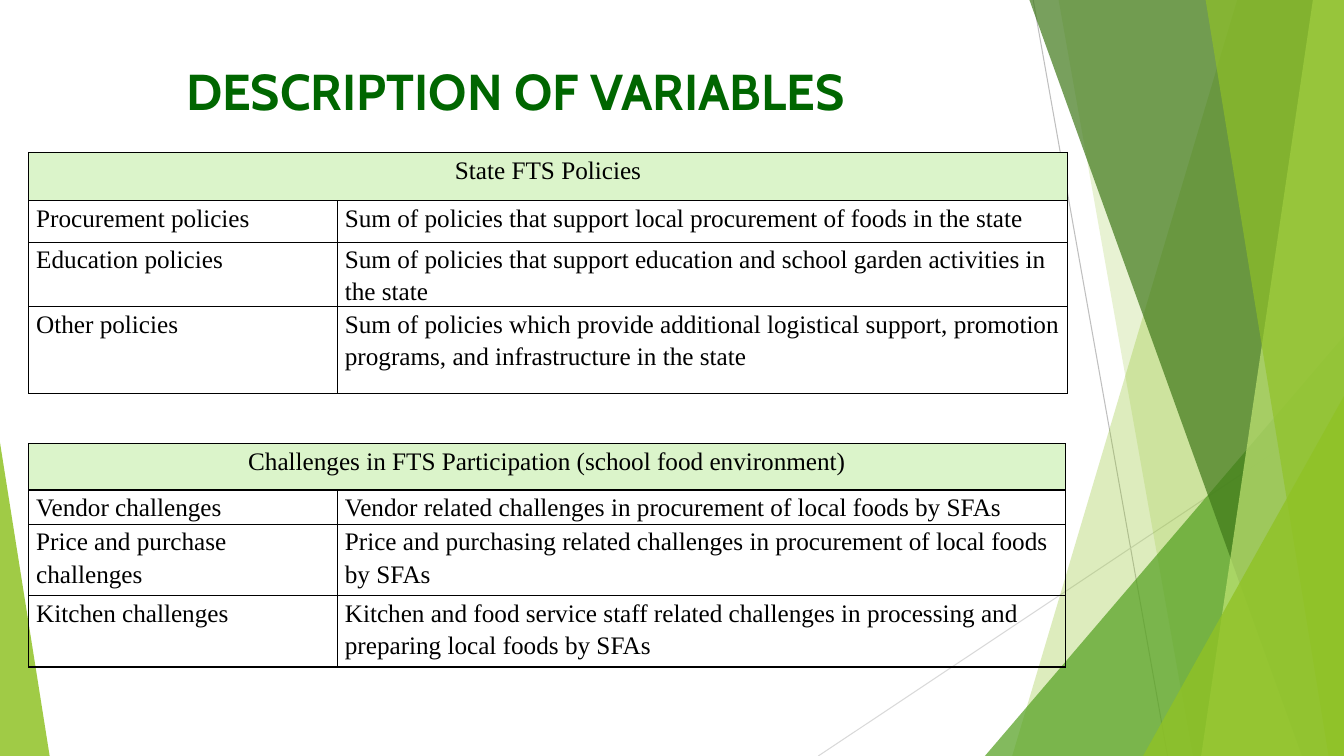
from lxml.etree import SubElement
from pptx import Presentation
from pptx.dml.color import RGBColor
from pptx.enum.shapes import MSO_CONNECTOR, MSO_SHAPE
from pptx.enum.text import MSO_ANCHOR, PP_ALIGN
from pptx.oxml.ns import qn
from pptx.util import Pt

BLACK, HEADER_GREEN, TITLE_GREEN, LEAF = "000000", "DBF4CA", "006600", "90C226"
WIDTH, HEIGHT = 960, 540
TOP = -0.72


def color(hex_string):
    return RGBColor.from_string(hex_string)


def fill_translucent(shape, hex_string, opacity):
    """Fill a borderless shape with a colour at the given opacity in percent."""
    shape.shadow.inherit = False
    shape.line.fill.background()
    shape.fill.solid()
    shape.fill.fore_color.rgb = color(hex_string)
    rgb = shape.fill._xPr.find(".//" + qn("a:srgbClr"))
    SubElement(rgb, qn("a:alpha"), val=str(opacity * 1000))


presentation = Presentation()
presentation.slide_width, presentation.slide_height = Pt(WIDTH), Pt(HEIGHT)
slide = presentation.slides.add_slide(presentation.slide_layouts[5])
shapes = slide.shapes

# Thin background lines
for start_x, start_y, end_x, end_y, gray in [
    (738, 0, 834, HEIGHT, "BFBFBF"),
    (WIDTH, 290, 584.5, HEIGHT, "D9D9D9"),
]:
    connector = shapes.add_connector(
        MSO_CONNECTOR.STRAIGHT, Pt(start_x), Pt(start_y), Pt(end_x), Pt(end_y))
    connector.line.color.rgb = color(gray)
    connector.line.width = Pt(0.75)
    SubElement(connector._element.spPr, qn("a:effectLst"))

# Facets, back to front: bands run to the right edge, triangles stand on the bottom
facets = [
    ("band", (884.2, 723), LEAF, 30),
    ("band", (756, 852), LEAF, 20),
    ("triangle", (703.5, 240, 256.5, 300, 1), "54A021", 72),
    ("band", (735, 929.5), "3F7819", 70),
    ("band", (938, 858.3), "C0E474", 70),
    ("band", (861, 949), LEAF, 65),
    ("triangle", (816.5, 283, 143.5, 257, 1), LEAF, 80),
    ("triangle", (0, 316, 35.5, 224, 0), LEAF, 85),
]
for kind, geometry, hex_string, opacity in facets:
    if kind == "band":
        top_x, bottom_x = geometry
        builder = shapes.build_freeform(top_x, TOP, scale=Pt(1))
        builder.add_line_segments([(WIDTH, TOP), (WIDTH, HEIGHT), (bottom_x, HEIGHT)])
        facet = builder.convert_to_shape()
    else:
        *box, apex = geometry
        facet = shapes.add_shape(MSO_SHAPE.ISOSCELES_TRIANGLE, *map(Pt, box))
        facet.adjustments[0] = apex
    fill_translucent(facet, hex_string, opacity)

title = shapes.title
title.left, title.top, title.width, title.height = Pt(29.5), Pt(34), Pt(677), Pt(60.5)
title.text_frame.text = "DESCRIPTION OF VARIABLES"
title.text_frame.vertical_anchor = MSO_ANCHOR.MIDDLE
paragraph = title.text_frame.paragraphs[0]
paragraph.alignment = PP_ALIGN.CENTER
for name, value in {"name": "Cabin", "size": Pt(36), "bold": True}.items():
    setattr(paragraph.font, name, value)
paragraph.font.color.rgb = color(TITLE_GREEN)

tables = [
    (109, (220.5, 521.5), (34.5, 29.5, 46, 62), [
        ("State FTS Policies", ""),
        ("Procurement policies",
         "Sum of policies that support local procurement of foods in the state"),
        ("Education policies",
         "Sum of policies that support education and school garden activities in the state"),
        ("Other policies",
         "Sum of policies which provide additional logistical support, promotion "
         "programs, and infrastructure in the state"),
    ]),
    (317, (220.5, 520), (33, 24.5, 51, 51), [
        ("Challenges in FTS Participation (school food environment)", ""),
        ("Vendor challenges",
         "Vendor related challenges in procurement of local foods by SFAs"),
        ("Price and purchase challenges",
         "Price and purchasing related challenges in procurement of local foods by SFAs"),
        ("Kitchen challenges",
         "Kitchen and food service staff related challenges in processing and "
         "preparing local foods by SFAs"),
    ]),
]
cell_format = {"margin_left": Pt(5.4), "margin_right": Pt(5.4),
               "margin_top": 0, "margin_bottom": 0}

for top, column_widths, row_heights, rows in tables:
    table = shapes.add_table(
        len(rows), 2, Pt(20.5), Pt(top), Pt(sum(column_widths)), Pt(sum(row_heights))).table
    table.first_row = table.horz_banding = False
    for column, width in zip(table.columns, column_widths):
        column.width = Pt(width)
    for row, height in zip(table.rows, row_heights):
        row.height = Pt(height)
    table.cell(0, 0).merge(table.cell(0, 1))

    for row_index, texts in enumerate(rows):
        for column_index, text in enumerate(texts):
            cell = table.cell(row_index, column_index)
            for name, value in cell_format.items():
                setattr(cell, name, value)
            for side in ("lnL", "lnR", "lnT", "lnB"):
                border = SubElement(cell._tc.get_or_add_tcPr(), qn("a:" + side), w=str(Pt(1)))
                SubElement(SubElement(border, qn("a:solidFill")), qn("a:srgbClr"), val=BLACK)
            if row_index == 0:
                cell.fill.solid()
                cell.fill.fore_color.rgb = color(HEADER_GREEN)
            else:
                cell.fill.background()
            cell.text = text
            paragraph = cell.text_frame.paragraphs[0]
            paragraph.alignment = PP_ALIGN.LEFT if row_index else PP_ALIGN.CENTER
            paragraph.line_spacing = 1.15
            paragraph.font.name = "Times New Roman"
            paragraph.font.size = Pt(18)
            paragraph.font.color.rgb = color(BLACK)

presentation.save("out.pptx")
